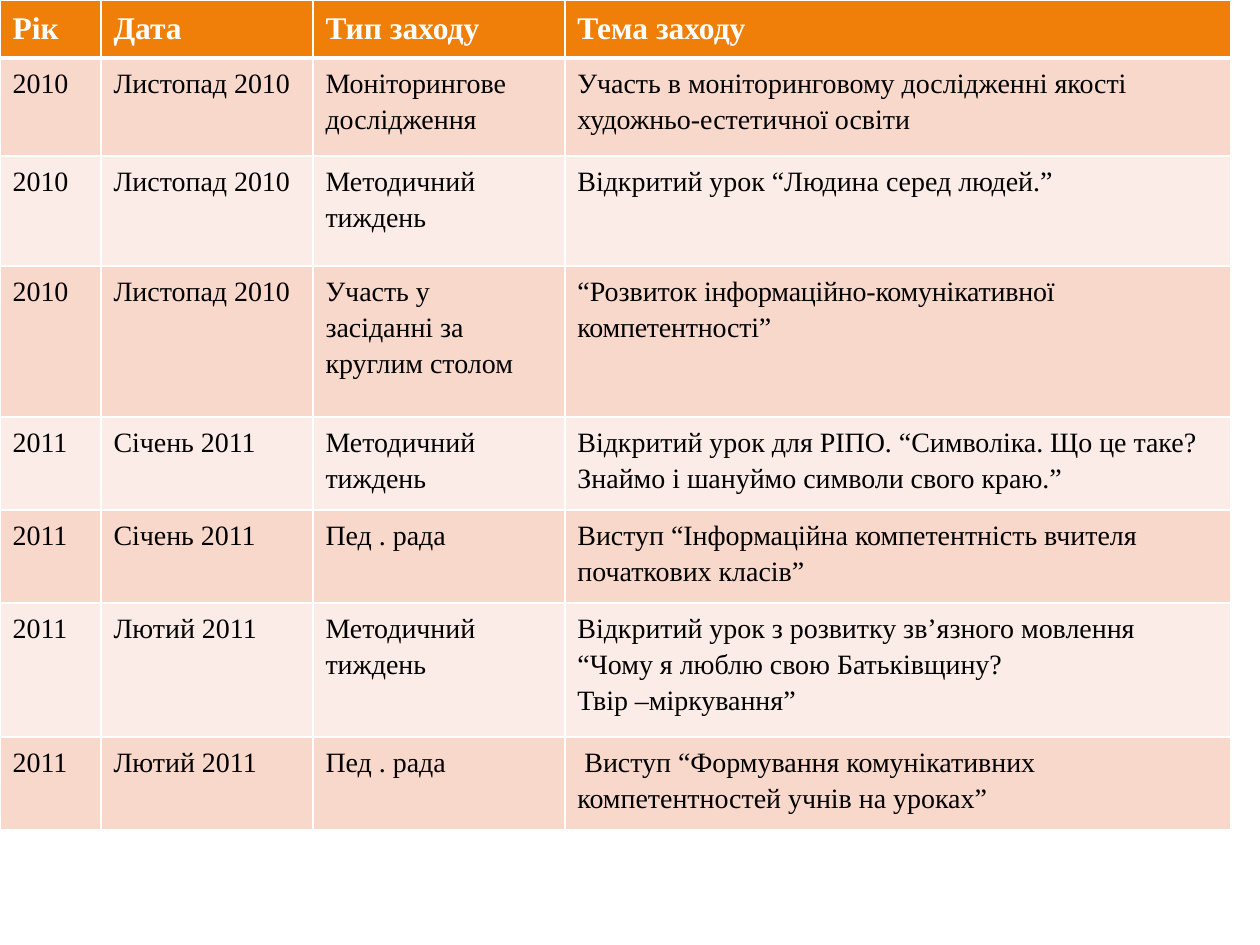
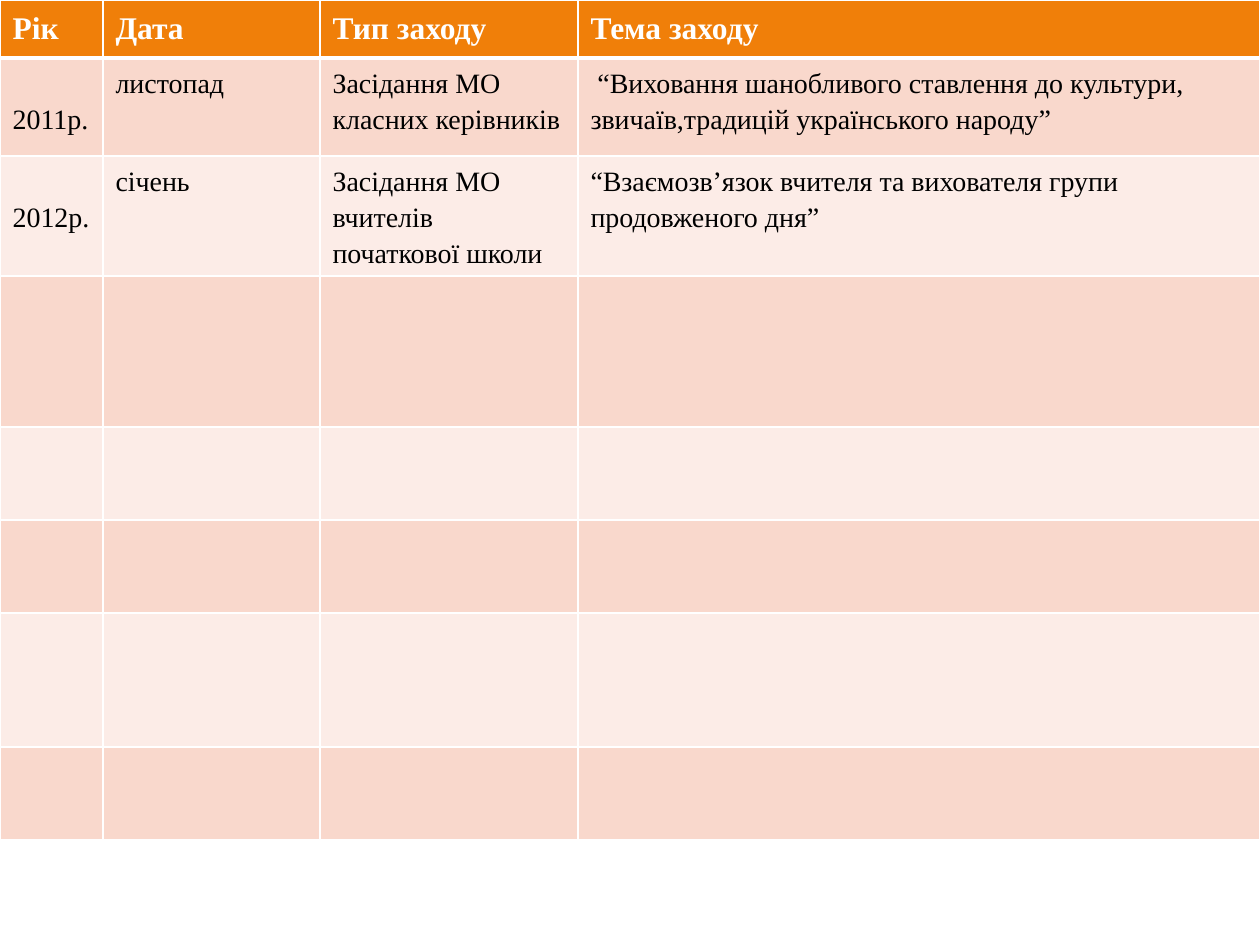
from pptx import Presentation
from pptx.dml.color import RGBColor as RGB
from pptx.oxml.ns import qn
from pptx.util import Emu, Pt
from lxml.etree import SubElement

PX = 914400 // 126
FONT = "Times New Roman"
WHITE = RGB(0xFF, 0xFF, 0xFF)
BLACK = RGB(0x00, 0x00, 0x00)
HEADER_FILL = RGB(0xF0, 0x7F, 0x09)
BAND_FILLS = [RGB(0xFC, 0xEC, 0xE7), RGB(0xF9, 0xD8, 0xCC)]

# Shared table layout, in px
HEADINGS = ("Рік", "Дата", "Тип заходу", "Тема заходу")
ROW_HEIGHTS = [58, 98, 110, 151, 93, 93, 134, 93]
CELL_TOP = 6
LINE_HEIGHT = 36

# Cell text: \n starts a paragraph, \v breaks a line, | starts tighter lettering
EVENTS_2010_2011 = [
    ("2010", "Листопад 2010", "Моніторингове\nдослідження",
     "Участь в моніторинговому дослідженні якості художньо-естетичної освіти"),
    ("2010", "Листопад 2010", "Методичний тиждень",
     "Відкритий урок “Людина серед людей.”"),
    ("2010", "Листопад 2010", "Участь у\vзасіданні за\vкруглим столом",
     "“Розвиток |інформаційно-комунікативної компетентності”"),
    ("2011", "Січень 2011", "Методичний тиждень",
     "Відкритий урок для РІПО. “Символіка. Що це таке?\v"
     "Знаймо і шануймо символи свого краю.”"),
    ("2011", "Січень 2011", "Пед . рада",
     "Виступ “Інформаційна компетентність вчителя\vпочаткових класів”"),
    ("2011", "Лютий 2011", "Методичний тиждень",
     "Відкритий урок з розвитку зв’язного мовлення\v"
     "“Чому я люблю свою Батьківщину?\nТвір –міркування”"),
    ("2011", "Лютий 2011", "Пед . рада",
     " Виступ “Формування комунікативних компетентностей учнів на уроках”"),
]
EVENTS_2011_2012 = [
    ("2011р.", "листопад", "Засідання МО класних керівників",
     " “Виховання шанобливого ставлення до культури, "
     "звичаїв,традицій українського народу”"),
    ("2012р.", "січень", "Засідання МО вчителів початкової школи",
     "“Взаємозв’язок вчителя та вихователя групи продовженого дня”"),
]

# Column widths, events, and lines by which the years are lowered
TABLES = [
    ([101, 212, 252, 666], EVENTS_2010_2011, 0),
    ([103, 217, 258, 682], EVENTS_2011_2012, 1),
]


def write_text(cell, text, size, color, bold):
    for index, line in enumerate(text.split("\n")):
        frame = cell.text_frame
        paragraph = frame.add_paragraph() if index else frame.paragraphs[0]
        paragraph.line_spacing = 1.15
        for part_index, part in enumerate(line.split("\v")):
            if part_index:
                paragraph.add_line_break()
            for tight, piece in enumerate(part.split("|")):
                run = paragraph.add_run()
                run.text = piece
                run.font.name = FONT
                run.font.size = Pt(size)
                run.font.bold = bold
                run.font.color.rgb = color
                if tight:
                    run.font._element.set("spc", "-10")


def add_borders(cell, widths):
    properties = cell._tc.get_or_add_tcPr()
    for side, width in zip("LRTB", widths):
        line = SubElement(properties, qn(f"a:ln{side}"), w=str(Pt(width)))
        fill = SubElement(line, qn("a:solidFill"))
        SubElement(fill, qn("a:srgbClr"), val=str(WHITE))


presentation = Presentation()
presentation.slide_width = Emu(1260 * PX)
presentation.slide_height = Emu(945 * PX)

for widths, events, year_offset in TABLES:
    slide = presentation.slides.add_slide(presentation.slide_layouts[6])
    table = slide.shapes.add_table(
        len(ROW_HEIGHTS), len(widths), 0, 0,
        Emu(sum(widths) * PX), Emu(sum(ROW_HEIGHTS) * PX)).table
    for column, width in zip(table.columns, widths):
        column.width = Emu(width * PX)
    for row, height in zip(table.rows, ROW_HEIGHTS):
        row.height = Emu(height * PX)

    # Borders and banded fills
    for row_index, row in enumerate(table.rows):
        for cell in row.cells:
            add_borders(cell, (1, 1, 3 if row_index == 1 else 1,
                               3 if row_index == 0 else 1))
            cell.fill.solid()
            cell.fill.fore_color.rgb = (
                BAND_FILLS[row_index % 2] if row_index else HEADER_FILL)

    # Headings and events
    for cell, heading in zip(table.rows[0].cells, HEADINGS):
        write_text(cell, heading, 18, WHITE, True)
    for row_index, event in enumerate(events, 1):
        for column_index, text in enumerate(event):
            write_text(table.cell(row_index, column_index), text, 16, BLACK, False)
        table.cell(row_index, 0).margin_top = Emu(
            (CELL_TOP + year_offset * LINE_HEIGHT) * PX)

presentation.save("out.pptx")
